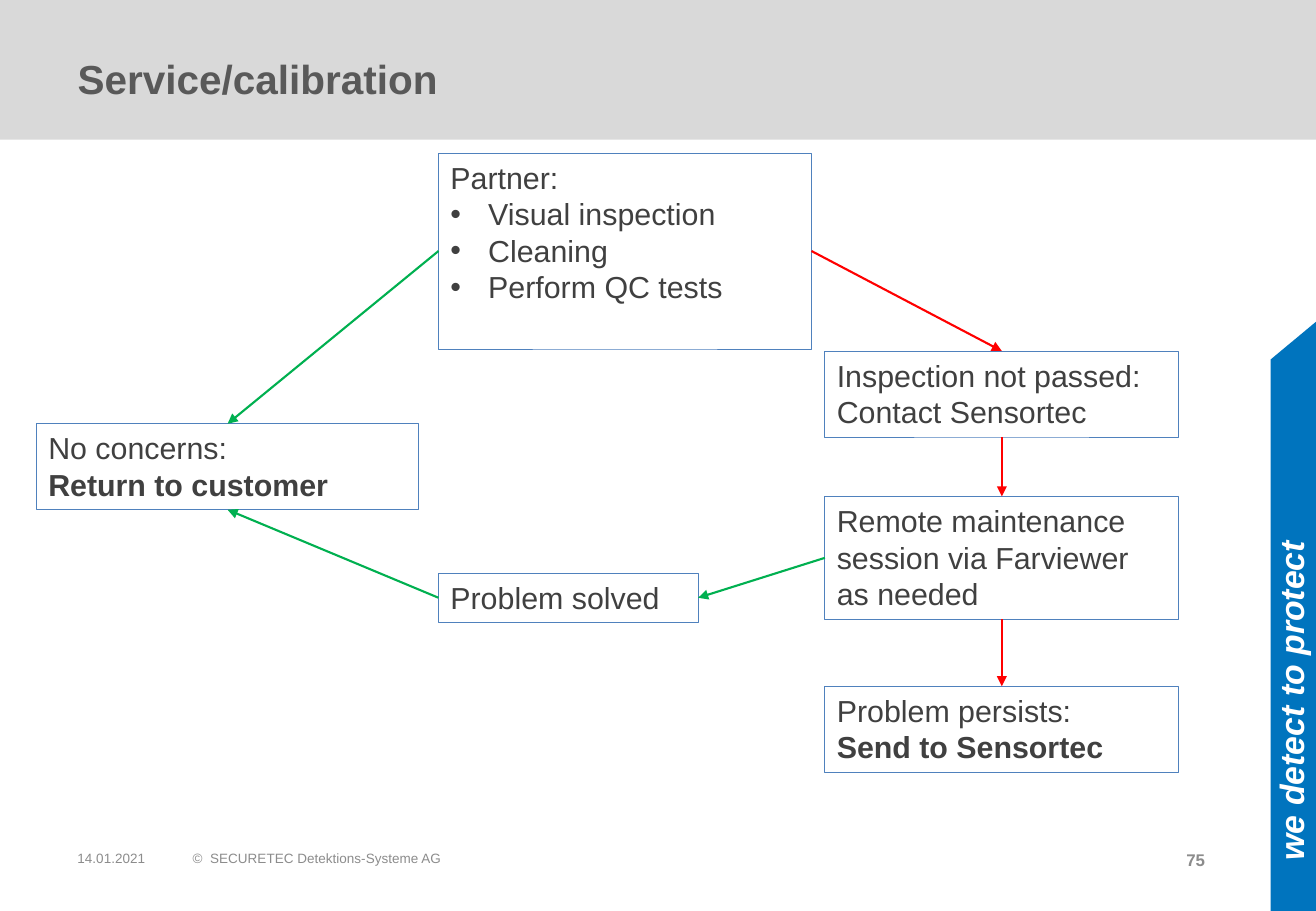
from dataclasses import dataclass
from enum import IntEnum

from lxml import etree
from pptx import Presentation
from pptx import util as u
from pptx.dml.color import RGBColor
from pptx.enum import shapes, text
from pptx.oxml.ns import qn


@dataclass(frozen=True)
class Theme:
    font: str = "Arial"
    band: str = "D9D9D9"
    title: str = "595959"
    body: str = "404040"
    footer: str = "8C8C8C"
    outline: str = "4F81BD"
    strip: str = "0074BE"
    slogan: str = "FFFFFF"
    passed: str = "00B050"
    failed: str = "FF0000"
    title_size: int = 24
    slogan_size: int = 20
    body_size: int = 18
    number_size: int = 10
    footer_size: int = 8
    outline_width: float = 0.5
    arrow_width: float = 1.25


class Side(IntEnum):
    TOP = 0
    LEFT = 1
    BOTTOM = 2
    RIGHT = 3


@dataclass(frozen=True)
class Line:
    words: str
    bold: bool = False
    bullet: bool = False


@dataclass(frozen=True)
class Step:
    name: str
    left: float
    top: float
    width: float
    height: float
    lines: tuple[Line, ...]


@dataclass(frozen=True)
class Arrow:
    start: str
    start_side: Side
    end: str
    end_side: Side
    color: str


@dataclass(frozen=True)
class Label:
    words: str
    left: float
    top: float
    width: float
    height: float
    size: int
    color: str
    bold: bool = False
    italic: bool = False
    rotation: int = 0


THEME = Theme()
SLIDE_WIDTH, SLIDE_HEIGHT = 27.52, 19.05
BAND_HEIGHT = 2.92
STRIP_LEFT, STRIP_TOP, STRIP_SHOULDER = 26.57, 6.73, 7.52
MIDDLE, RIGHT, RIGHT_WIDTH, TWO_LINES = 9.17, 17.25, 7.4, 1.8
FOOTER_TOP, FOOTER_HEIGHT = 17.65, 1.02

STEPS = (
    Step("partner", MIDDLE, 3.2, 7.8, 4.1, (
        Line("Partner:"),
        Line("Visual inspection", bullet=True),
        Line("Cleaning", bullet=True),
        Line("Perform QC tests", bullet=True),
    )),
    Step("return", 0.76, 8.86, 8, TWO_LINES, (
        Line("No concerns:"), Line("Return to customer", bold=True))),
    Step("contact", RIGHT, 7.34, RIGHT_WIDTH, TWO_LINES, (
        Line("Inspection not passed: Contact Sensortec"),)),
    Step("remote", RIGHT, 10.38, RIGHT_WIDTH, 2.57, (
        Line("Remote maintenance session via Farviewer as needed"),)),
    Step("send", RIGHT, 14.35, RIGHT_WIDTH, TWO_LINES, (
        Line("Problem persists:"), Line("Send to Sensortec", bold=True))),
    Step("solved", MIDDLE, 11.99, 5.43, 1.02, (Line("Problem solved"),)),
)

ARROWS = (
    Arrow("partner", Side.RIGHT, "contact", Side.TOP, THEME.failed),
    Arrow("contact", Side.BOTTOM, "remote", Side.TOP, THEME.failed),
    Arrow("remote", Side.BOTTOM, "send", Side.TOP, THEME.failed),
    Arrow("remote", Side.LEFT, "solved", Side.RIGHT, THEME.passed),
    Arrow("solved", Side.LEFT, "return", Side.BOTTOM, THEME.passed),
    Arrow("partner", Side.LEFT, "return", Side.TOP, THEME.passed),
)

LABELS = (
    Label("we detect to protect", 22.73, 13.44, 8.51, 1.09,
          THEME.slogan_size, THEME.slogan, bold=True, italic=True, rotation=270),
    Label("14.01.2021", 1.37, FOOTER_TOP, 2.2, FOOTER_HEIGHT,
          THEME.footer_size, THEME.footer),
    Label("©  SECURETEC Detektions-Systeme AG", 3.78, FOOTER_TOP, 20.57, FOOTER_HEIGHT,
          THEME.footer_size, THEME.footer),
    Label("75", 24.56, FOOTER_TOP, 1.57, FOOTER_HEIGHT,
          THEME.number_size, THEME.footer, bold=True),
)


def set_font(paragraph, size: int, color: str, bold: bool = False, italic: bool = False) -> None:
    paragraph.alignment = text.PP_ALIGN.LEFT
    font = paragraph.font
    font.name, font.size = THEME.font, u.Pt(size)
    font.bold, font.italic = bold, italic
    font.color.rgb = RGBColor.from_string(color)


def add_bullet(paragraph) -> None:
    properties = paragraph._p.get_or_add_pPr()
    indent = u.Cm(0.79)
    properties.set("marL", str(indent))
    properties.set("indent", str(-indent))
    etree.SubElement(properties, qn("a:buFont")).set("typeface", THEME.font)
    etree.SubElement(properties, qn("a:buChar")).set("char", "•")


def fill_plain(shape, color: str) -> None:
    shape.shadow.inherit = False
    shape.fill.solid()
    shape.fill.fore_color.rgb = RGBColor.from_string(color)
    shape.line.fill.background()


def add_background(slide) -> None:
    band = slide.shapes.add_shape(
        shapes.MSO_SHAPE.RECTANGLE, 0, 0, u.Cm(SLIDE_WIDTH), u.Cm(BAND_HEIGHT))
    fill_plain(band, THEME.band)
    builder = slide.shapes.build_freeform(u.Cm(STRIP_LEFT), u.Cm(STRIP_SHOULDER))
    corners = ((SLIDE_WIDTH, STRIP_TOP), (SLIDE_WIDTH, SLIDE_HEIGHT), (STRIP_LEFT, SLIDE_HEIGHT))
    builder.add_line_segments([(u.Cm(x), u.Cm(y)) for x, y in corners], close=True)
    fill_plain(builder.convert_to_shape(), THEME.strip)


def set_title(slide, words: str) -> None:
    title = slide.shapes.title
    title.left, title.top = u.Cm(1.37), u.Cm(0.76)
    title.width, title.height = u.Cm(20.4), u.Cm(1.75)
    title.text_frame.text = words
    title.text_frame.vertical_anchor = text.MSO_ANCHOR.MIDDLE
    set_font(title.text_frame.paragraphs[0], THEME.title_size, THEME.title, bold=True)
    slide.shapes._spTree.append(title._element)


def add_label(slide, label: Label) -> None:
    box = slide.shapes.add_textbox(
        u.Cm(label.left), u.Cm(label.top), u.Cm(label.width), u.Cm(label.height))
    box.rotation = label.rotation
    box.text_frame.word_wrap = True
    box.text_frame.text = label.words
    set_font(box.text_frame.paragraphs[0], label.size, label.color, label.bold, label.italic)


def add_step(slide, step: Step):
    shape = slide.shapes.add_shape(
        shapes.MSO_SHAPE.RECTANGLE,
        u.Cm(step.left), u.Cm(step.top), u.Cm(step.width), u.Cm(step.height))
    shape.shadow.inherit = False
    shape.fill.background()
    shape.line.color.rgb = RGBColor.from_string(THEME.outline)
    shape.line.width = u.Pt(THEME.outline_width)
    frame = shape.text_frame
    frame.word_wrap = True
    frame.vertical_anchor = text.MSO_ANCHOR.TOP
    frame.text = "\n".join(line.words for line in step.lines)
    for paragraph, line in zip(frame.paragraphs, step.lines):
        if line.bullet:
            add_bullet(paragraph)
        set_font(paragraph, THEME.body_size, THEME.body, line.bold)
    return shape


def add_arrow(slide, arrow: Arrow, boxes: dict) -> None:
    connector = slide.shapes.add_connector(shapes.MSO_CONNECTOR.STRAIGHT, 0, 0, 0, 0)
    connector.begin_connect(boxes[arrow.start], int(arrow.start_side))
    connector.end_connect(boxes[arrow.end], int(arrow.end_side))
    connector.line.color.rgb = RGBColor.from_string(arrow.color)
    connector.line.width = u.Pt(THEME.arrow_width)
    etree.SubElement(connector.line._get_or_add_ln(), qn("a:tailEnd")).set("type", "triangle")
    etree.SubElement(connector._element.spPr, qn("a:effectLst"))


def main() -> None:
    presentation = Presentation()
    presentation.slide_width, presentation.slide_height = u.Cm(SLIDE_WIDTH), u.Cm(SLIDE_HEIGHT)
    slide = presentation.slides.add_slide(presentation.slide_layouts[5])
    add_background(slide)
    set_title(slide, "Service/calibration")
    for label in LABELS:
        add_label(slide, label)
    boxes = {step.name: add_step(slide, step) for step in STEPS}
    for arrow in ARROWS:
        add_arrow(slide, arrow, boxes)
    presentation.save("out.pptx")


if __name__ == "__main__":
    main()
